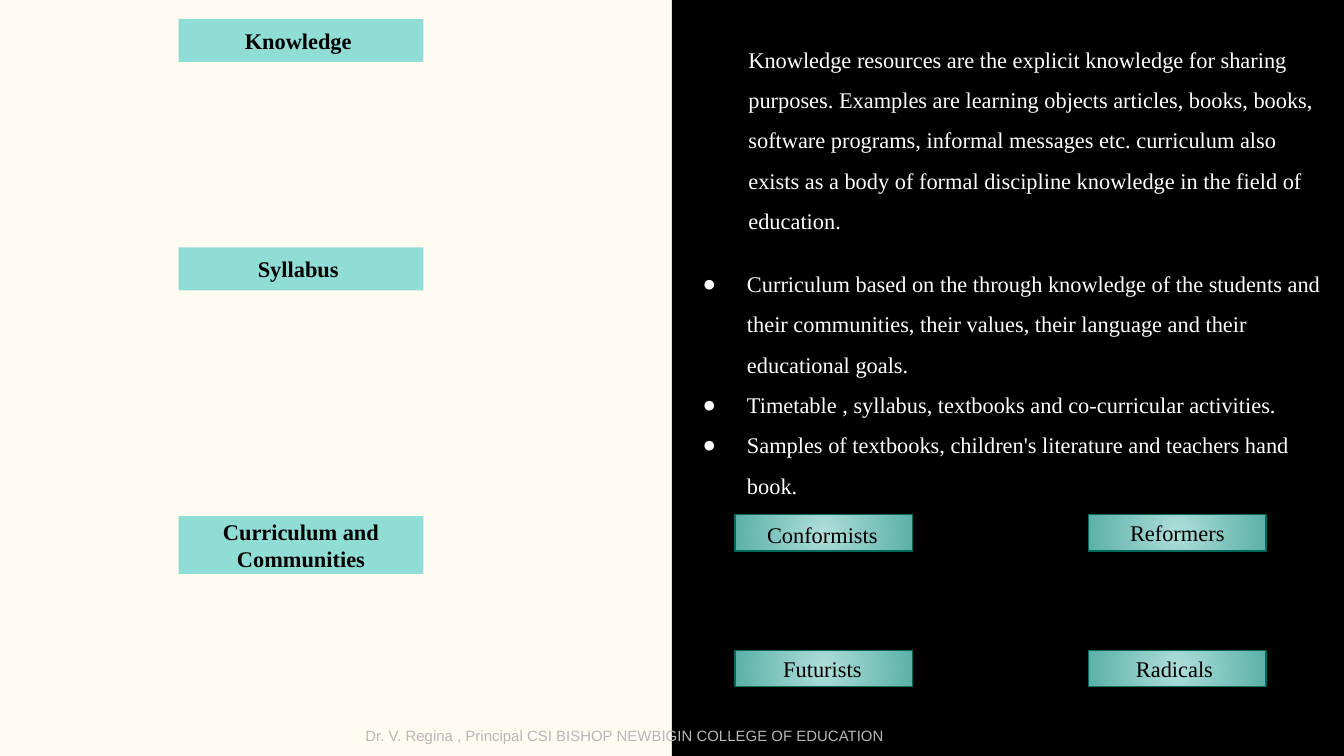
from dataclasses import dataclass
from lxml.etree import SubElement
from pptx import Presentation
from pptx.dml.color import RGBColor
from pptx.enum.shapes import MSO_SHAPE
from pptx.enum.text import MSO_ANCHOR, MSO_AUTO_SIZE, PP_ALIGN
from pptx.oxml.ns import qn
from pptx.util import Inches, Pt


@dataclass(frozen=True)
class Theme:
    """Colours, fonts and type sizes."""
    cream: str = "FFFBF0"
    black: str = "000000"
    white: str = "FFFFFF"
    gray: str = "B7B7B7"
    mint: str = "90DDD6"
    glow: str = "AFDEDA"
    teal: str = "5AB1A8"
    edge: str = "00695C"
    serif: str = "Times New Roman"
    sans: str = "Arial"
    body: int = 12
    small: int = 8


THEME = Theme()
WIDE = 10
HIGH = WIDE * 9 / 16


def color(code):
    """Turn a hex code into a colour."""
    return RGBColor.from_string(code)


def add_dot(para, code, font):
    """Give a paragraph a hanging round bullet."""
    props = para._p.get_or_add_pPr()
    props.set("marL", str(Inches(0.5)))
    props.set("indent", str(Inches(-0.33)))
    tint = SubElement(props, qn("a:buClr"))
    SubElement(tint, qn("a:srgbClr")).set("val", code)
    SubElement(props, qn("a:buFont")).set("typeface", font)
    SubElement(props, qn("a:buChar")).set("char", "●")


def write(shape, *lines, font=THEME.serif, size=THEME.body, ink=THEME.black, bold=False,
          align=PP_ALIGN.LEFT, anchor=MSO_ANCHOR.TOP, space=None, dots=False, grow=False):
    """Fill a shape with one paragraph for each line."""
    frame = shape.text_frame
    frame.word_wrap = True
    frame.vertical_anchor = anchor
    frame.margin_left = frame.margin_right = Inches(0.1)
    frame.margin_top = frame.margin_bottom = Inches(0.1)
    if grow:
        frame.auto_size = MSO_AUTO_SIZE.SHAPE_TO_FIT_TEXT
    for num, line in enumerate(lines):
        para = frame.add_paragraph() if num else frame.paragraphs[0]
        para.alignment = align
        if space:
            para.line_spacing = space
        if dots:
            add_dot(para, ink, font)
        run = para.add_run()
        run.text = line
        run.font.name = font
        run.font.size = Pt(size)
        run.font.bold = bold
        run.font.color.rgb = color(ink)


class Deck:
    """Hold the theme and the current slide."""

    def __init__(self, theme):
        """Start a one-slide deck with a plain background."""
        self.theme = theme
        self.show = Presentation()
        self.show.slide_width = Inches(WIDE)
        self.show.slide_height = Inches(HIGH)
        self.slide = self.show.slides.add_slide(self.show.slide_layouts[6])
        fill = self.slide.background.fill
        fill.solid()
        fill.fore_color.rgb = color(theme.cream)

    def block(self, left, top, width, height, code):
        """Draw a flat rectangle without a border."""
        box = self.slide.shapes.add_shape(
            MSO_SHAPE.RECTANGLE, Inches(left), Inches(top), Inches(width), Inches(height))
        box.shadow.inherit = False
        box.fill.solid()
        box.fill.fore_color.rgb = color(code)
        box.line.fill.background()
        return box

    def label(self, top, height, text):
        """Draw a bold heading on the left half."""
        box = self.block(1.33, top, 1.82, height, self.theme.mint)
        write(box, text, bold=True, align=PP_ALIGN.CENTER, anchor=MSO_ANCHOR.MIDDLE)

    def button(self, left, top):
        """Draw a bordered box with a radial gradient."""
        box = self.block(left, top, 1.32, 0.27, self.theme.teal)
        box.fill.gradient()
        for stop, code in zip(box.fill.gradient_stops, (self.theme.glow, self.theme.teal)):
            stop.color.rgb = color(code)
        grad = box._element.spPr.find(qn("a:gradFill"))
        grad.remove(grad.find(qn("a:lin")))
        round_fill = SubElement(grad, qn("a:path"))
        round_fill.set("path", "circle")
        focus = SubElement(round_fill, qn("a:fillToRect"))
        for side in "ltrb":
            focus.set(side, "50000")
        box.line.color.rgb = color(self.theme.edge)
        box.line.width = Pt(0.75)

    def text(self, left, top, width, height, *lines, **style):
        """Place free text."""
        box = self.slide.shapes.add_textbox(
            Inches(left), Inches(top), Inches(width), Inches(height))
        write(box, *lines, **style)


def main():
    """Build and save the slide."""
    deck = Deck(THEME)
    deck.block(WIDE / 2, 0, WIDE / 2, HIGH, THEME.black)
    for top, height, text in ((0.14, 0.32, "Knowledge "), (1.84, 0.32, "Syllabus "),
                              (3.84, 0.43, "Curriculum and Communities")):
        deck.label(top, height, text)
    deck.text(5.47, 0.14, 4.48, 1.48,
              "Knowledge resources are the explicit knowledge for sharing purposes. "
              "Examples are learning objects articles, books, books, software programs, "
              "informal messages etc. curriculum also exists as a body of formal "
              "discipline knowledge in the field of education.",
              ink=THEME.white, space=1.5)
    deck.text(4.96, 1.81, 5.04, 1.98,
              "Curriculum based on the through knowledge of the students and their "
              "communities, their values, their language and their educational goals.",
              "Timetable , syllabus, textbooks and co-curricular activities.",
              "Samples of textbooks, children's literature and teachers hand book.",
              ink=THEME.white, space=1.5, dots=True)
    for left in (5.47, 8.1):
        for top in (3.83, 4.84):
            deck.button(left, top)
    for left, top, text in ((5.48, 3.84, "Conformists "), (8.1, 3.83, "Reformers"),
                            (5.48, 4.84, "Futurists "), (8.1, 4.84, "Radicals ")):
        deck.text(left, top, 1.32, 0.27, text,
                  align=PP_ALIGN.CENTER, anchor=MSO_ANCHOR.MIDDLE)
    deck.text(2.62, 5.34, 5.45, 0.28,
              "Dr. V. Regina , Principal CSI BISHOP NEWBIGIN COLLEGE OF EDUCATION",
              font=THEME.sans, size=THEME.small, ink=THEME.gray, grow=True)
    deck.show.save("out.pptx")


if __name__ == "__main__":
    main()
